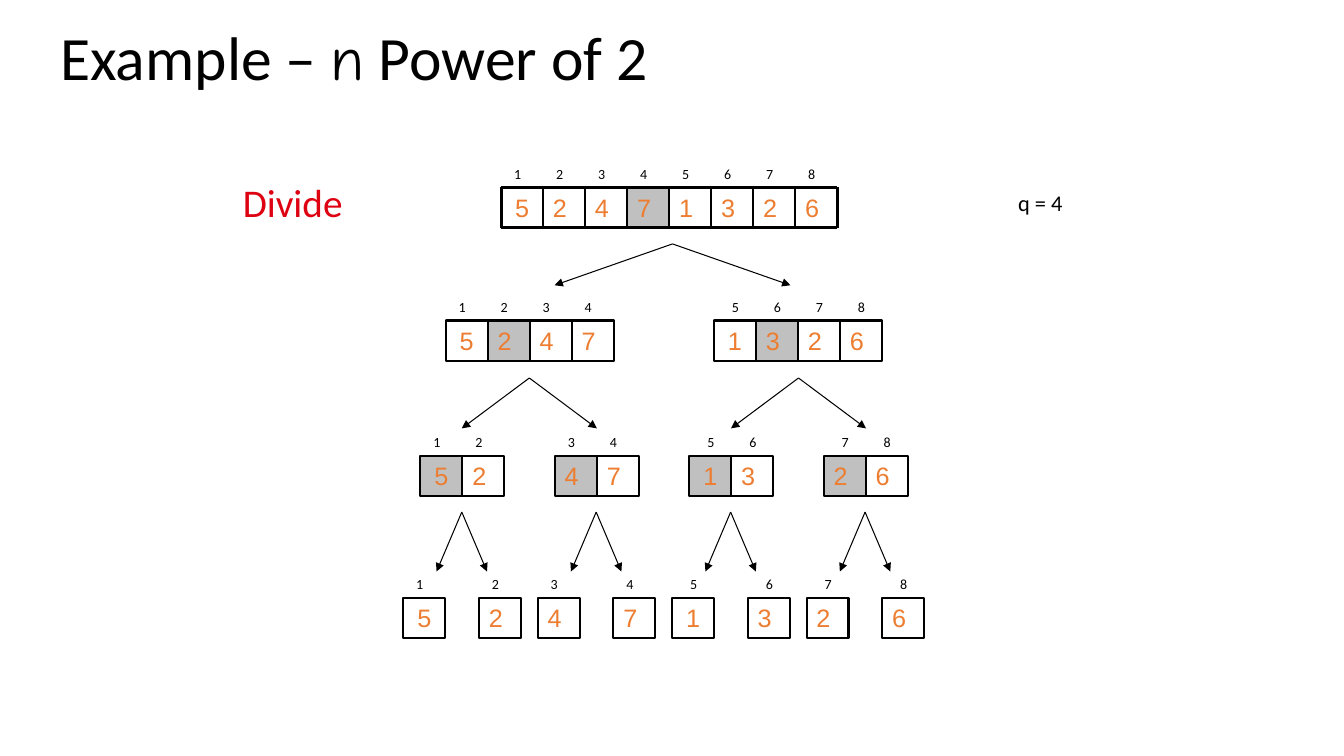
"""Build the slide that shows the divide steps for an array of eight numbers."""

from dataclasses import dataclass

from lxml import etree
from pptx import Presentation
from pptx.dml.color import RGBColor
from pptx.enum.shapes import MSO_CONNECTOR, MSO_SHAPE
from pptx.enum.text import MSO_ANCHOR, MSO_AUTO_SIZE, PP_ALIGN
from pptx.oxml.ns import qn
from pptx.shapes.autoshape import Shape
from pptx.shapes.shapetree import GroupShapes, SlideShapes
from pptx.text.text import Font
from pptx.util import Inches, Pt

RECTANGLE = MSO_SHAPE.RECTANGLE
STRAIGHT = MSO_CONNECTOR.STRAIGHT
TOP, MIDDLE = MSO_ANCHOR.TOP, MSO_ANCHOR.MIDDLE
LEFT, CENTER = PP_ALIGN.LEFT, PP_ALIGN.CENTER
GROW = MSO_AUTO_SIZE.SHAPE_TO_FIT_TEXT

VALUES = (5, 2, 4, 7, 1, 3, 2, 6)
CELL_WIDTH = 5 / 12
CELL_HEIGHT = 0.4
PAIR_STEP = 4 / 3
LABEL_RISE = 0.27


@dataclass(frozen=True)
class Style:
    """Font, size and colour of a text."""

    font: str
    size: float
    color: RGBColor


@dataclass(frozen=True)
class Theme:
    """Colours, line widths and text styles of the slide."""

    black: RGBColor = RGBColor(0x00, 0x00, 0x00)
    pivot: RGBColor = RGBColor(0xC0, 0xC0, 0xC0)
    frame: float = 2.25
    cell_line: float = 1.5
    divider: float = 1
    arrow: float = 0.75
    title: Style = Style("Calibri", 44, black)
    title_variable: Style = Style("Comic Neue", 44, black)
    heading: Style = Style("Calibri", 28, RGBColor(0xDD, 0x01, 0x11))
    note: Style = Style("Calibri", 16, black)
    label: Style = Style("Calibri", 10, black)
    value: Style = Style("Arial", 18, RGBColor(0xED, 0x7D, 0x31))


@dataclass(frozen=True)
class Fork:
    """Pairs of arrows that lead down from the given apexes."""

    apexes: tuple[float, ...]
    top: float
    bottom: float
    spread: float


@dataclass(frozen=True)
class Level:
    """One row of equally long subarrays and the forks above it."""

    top: float
    lefts: tuple[float, ...]
    fork: Fork | None = None


THEME = Theme()
PAIRS = range(4)
ROOT = Level(1.86, (4.97,))
LEVELS = (
    Level(3.18, (4.42, 7.08), Fork((6.67,), 2.42, 2.83, 1.17)),
    Level(4.52, tuple(4.17 + PAIR_STEP * pair for pair in PAIRS),
          Fork((5.25, 7.92), 3.75, 4.25, 0.67)),
    Level(5.93, tuple(4 + PAIR_STEP * pair + side for pair in PAIRS for side in (0, 0.75)),
          Fork(tuple(4.58 + PAIR_STEP * pair for pair in PAIRS), 5.08, 5.67, 0.25)),
)


def apply_style(font: Font, style: Style) -> None:
    """Set a font to a text style."""
    font.name = style.font
    font.size = Pt(style.size)
    font.color.rgb = style.color


def add_text(shapes: GroupShapes | SlideShapes, text: str, left: float, top: float,
             width: float, height: float, style: Style, wrap: bool = True) -> None:
    """Add a text box that grows with its text."""
    box = shapes.add_textbox(Inches(left), Inches(top), Inches(width), Inches(height))
    box.text_frame.word_wrap = wrap
    box.text_frame.auto_size = GROW
    paragraph = box.text_frame.paragraphs[0]
    paragraph.text = text
    apply_style(paragraph.font, style)


def add_title(shapes: SlideShapes) -> None:
    """Add the title with its variable in another font."""
    box = shapes.add_textbox(Inches(0.5), Inches(0.11), Inches(12), Inches(0.99))
    box.text_frame.word_wrap = True
    box.text_frame.vertical_anchor = MIDDLE
    paragraph = box.text_frame.paragraphs[0]
    paragraph.line_spacing = 0.9
    pieces = (("Example – ", THEME.title), ("n", THEME.title_variable),
              (" Power of 2", THEME.title))
    for text, style in pieces:
        run = paragraph.add_run()
        run.text = text
        apply_style(run.font, style)


def add_line(shapes: GroupShapes, start: tuple[float, float], end: tuple[float, float],
             width: float, arrow: bool = False) -> None:
    """Add a straight black line, with an arrowhead if asked."""
    connector = shapes.add_connector(STRAIGHT, *map(Inches, start + end))
    connector.line.color.rgb = THEME.black
    connector.line.width = Pt(width)
    properties = connector.element.spPr
    if arrow:
        etree.SubElement(properties.find(qn("a:ln")), qn("a:tailEnd"), type="triangle")
    etree.SubElement(properties, qn("a:effectLst"))


def add_cell(shapes: GroupShapes, value: int, left: float, top: float,
             is_pivot: bool, centered: bool, outlined: bool) -> None:
    """Add one array cell with its value."""
    bounds = [Inches(length) for length in (left, top, CELL_WIDTH, CELL_HEIGHT)]
    cell: Shape
    if is_pivot or outlined:
        cell = shapes.add_shape(RECTANGLE, *bounds)
        cell.shadow.inherit = False
    else:
        cell = shapes.add_textbox(*bounds)
    if is_pivot:
        cell.fill.solid()
        cell.fill.fore_color.rgb = THEME.pivot
    else:
        cell.fill.background()
    if outlined:
        cell.line.color.rgb = THEME.black
        cell.line.width = Pt(THEME.cell_line)
    else:
        cell.line.fill.background()
    cell.text_frame.word_wrap = True
    cell.text_frame.vertical_anchor = MIDDLE if centered else TOP
    paragraph = cell.text_frame.paragraphs[0]
    paragraph.text = str(value)
    paragraph.alignment = CENTER if centered else LEFT
    apply_style(paragraph.font, THEME.value)


def add_level(shapes: GroupShapes, level: Level, outlined: bool = True) -> None:
    """Add the cells, index labels and arrows of one level."""
    length = len(VALUES) // len(level.lefts)
    pivot = length // 2 - 1
    for number, array_left in enumerate(level.lefts):
        first = number * length
        label_shift = 0.08 if first >= 4 else 0.03
        for offset, value in enumerate(VALUES[first:first + length]):
            left = array_left + offset * CELL_WIDTH
            add_text(shapes, str(first + offset + 1), left + label_shift,
                     level.top - LABEL_RISE, 0.25, 0.27, THEME.label)
            centered = offset == 0 and first % 4 == 0
            add_cell(shapes, value, left, level.top, offset == pivot, centered, outlined)
    if level.fork:
        fork = level.fork
        for apex in fork.apexes:
            for end in (apex - fork.spread, apex + fork.spread):
                add_line(shapes, (apex, fork.top), (end, fork.bottom), THEME.arrow, True)


def add_root_frame(shapes: GroupShapes) -> None:
    """Add the thick frame and thin dividers of the whole array."""
    left, top, bottom = ROOT.lefts[0], ROOT.top, ROOT.top + CELL_HEIGHT
    count = len(VALUES)
    for y in (top, bottom):
        add_line(shapes, (left, y), (left + count * CELL_WIDTH, y), THEME.frame)
    for column in range(count + 1):
        x = left + column * CELL_WIDTH
        width = THEME.frame if column in (0, count) else THEME.divider
        add_line(shapes, (x, top), (x, bottom), width)


def main() -> None:
    """Build and save the presentation."""
    presentation = Presentation()
    presentation.slide_width = Inches(13.33)
    presentation.slide_height = Inches(7.5)
    slide = presentation.slides.add_slide(presentation.slide_layouts[6])
    add_title(slide.shapes)
    root_shapes = slide.shapes.add_group_shape().shapes
    add_level(root_shapes, ROOT, outlined=False)
    add_root_frame(root_shapes)
    add_text(root_shapes, "q = 4", 10, 1.83, 1.08, 0.37, THEME.note)
    for level in LEVELS:
        add_level(slide.shapes.add_group_shape().shapes, level)
    add_text(slide.shapes, "Divide", 2.31, 1.72, 1.2, 0.57, THEME.heading, wrap=False)
    presentation.save("out.pptx")


if __name__ == "__main__":
    main()
